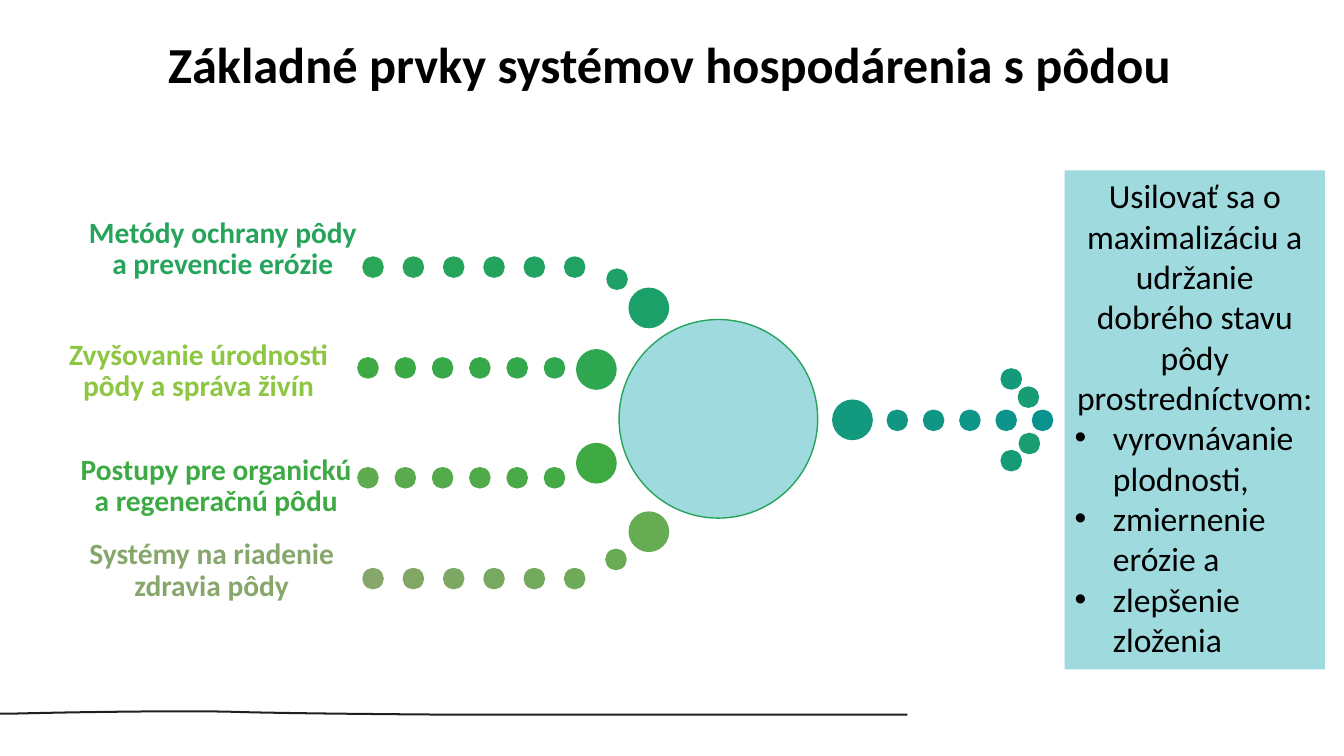
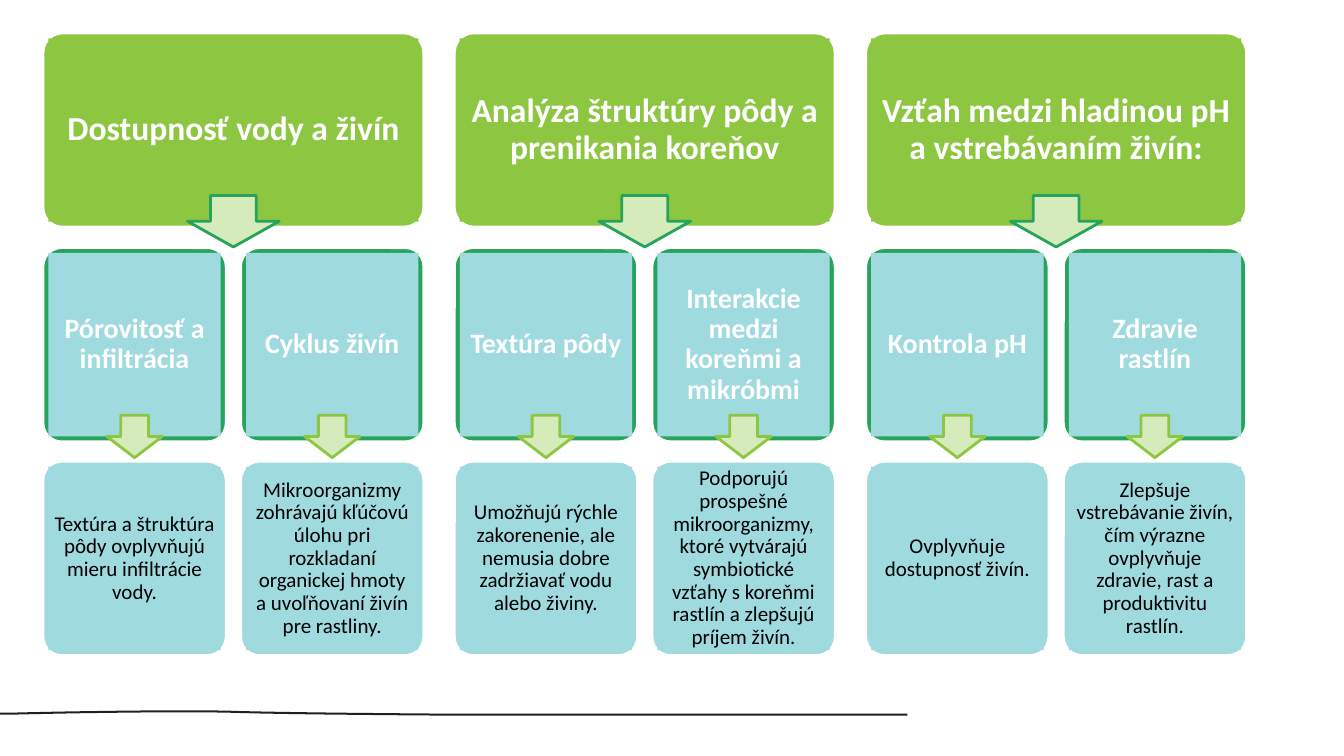
from lxml import etree
from pptx import Presentation
from pptx.dml.color import RGBColor
from pptx.enum.shapes import MSO_SHAPE
from pptx.enum.text import MSO_ANCHOR, PP_ALIGN
from pptx.oxml.ns import qn
from pptx.util import Inches, Pt

# Shared style
FONT = "Calibri"
BLACK = RGBColor(0x00, 0x00, 0x00)
WHITE = RGBColor(0xFF, 0xFF, 0xFF)
INK = RGBColor(0x23, 0x1F, 0x20)
AQUA = RGBColor(0x9F, 0xDA, 0xDF)
LIME = RGBColor(0x8D, 0xC6, 0x41)
PALE_LIME = RGBColor(0xD6, 0xEB, 0xBB)
GREEN = RGBColor(0x26, 0xA4, 0x5B)
LEAF = RGBColor(0x3D, 0xAA, 0x44)
OLIVE = RGBColor(0x86, 0xA6, 0x6B)

# Ends of the dot colour ramps
EMERALD = RGBColor(0x2A, 0xA6, 0x57)
SEA_GREEN = RGBColor(0x1C, 0xA0, 0x6A)
GRASS = RGBColor(0x2F, 0xA7, 0x51)
MOSS = RGBColor(0x5F, 0xAB, 0x4F)
MEADOW = RGBColor(0x3F, 0xAA, 0x44)
SAGE = RGBColor(0x65, 0xAC, 0x52)
TEAL = RGBColor(0x0A, 0x93, 0x8E)
JADE = RGBColor(0x19, 0x9D, 0x71)

DOT, HUB = 0.2, 0.39

# Label, label box, label colour, ramp ends, dot start, dot step, elbow, hub
INPUTS = [
    ("Metódy ochrany pôdy a prevencie erózie", (0.84, 2.3, 2.74, 0.49),
     GREEN, EMERALD, SEA_GREEN, (3.6, 2.55), 0.4, [(6.02, 2.67)], (6.24, 2.86)),
    ("Zvyšovanie úrodnosti pôdy a správa živín", (0.6, 3.51, 2.74, 0.49),
     LIME, LEAF, GRASS, (3.55, 3.55), 0.37, [], (5.72, 3.47)),
    ("Postupy pre organickú a regeneračnú pôdu", (0.73, 4.65, 2.83, 0.49),
     LEAF, MOSS, MEADOW, (3.55, 4.64), 0.37, [], (5.72, 4.4)),
    ("Systémy na riadenie zdravia pôdy", (0.73, 5.49, 2.74, 0.49),
     OLIVE, OLIVE, SAGE, (3.6, 5.64), 0.4, [(6.01, 5.45)], (6.24, 5.08)),
]
GOAL = ("Usilovať sa o maximalizáciu a udržanie dobrého stavu pôdy "
        "prostredníctvom:")
GOAL_POINTS = ["vyrovnávanie plodnosti,", "zmiernenie erózie a",
               "zlepšenie zloženia"]

# Column heading, then pairs of topic and effect
COLUMNS = [
    ("Dostupnosť vody a živín", [
        ("Pórovitosť a infiltrácia",
         "Textúra a štruktúra pôdy ovplyvňujú mieru infiltrácie vody."),
        ("Cyklus živín",
         "Mikroorganizmy zohrávajú kľúčovú úlohu pri rozkladaní organickej "
         "hmoty a uvoľňovaní živín pre rastliny."),
    ]),
    ("Analýza štruktúry pôdy a prenikania koreňov", [
        ("Textúra pôdy",
         "Umožňujú rýchle zakorenenie, ale nemusia dobre zadržiavať vodu "
         "alebo živiny."),
        ("Interakcie medzi koreňmi a mikróbmi",
         "Podporujú prospešné mikroorganizmy, ktoré vytvárajú symbiotické "
         "vzťahy s koreňmi rastlín a zlepšujú príjem živín."),
    ]),
    ("Vzťah medzi hladinou pH a vstrebávaním živín:", [
        ("Kontrola pH", "Ovplyvňuje dostupnosť živín."),
        ("Zdravie rastlín",
         "Zlepšuje vstrebávanie živín, čím výrazne ovplyvňuje zdravie, rast "
         "a produktivitu rastlín."),
    ]),
]


# Basic elements
def add_shape(s, kind, box, fill, line=None, width=1):
    sp = s.shapes.add_shape(kind, *map(Inches, box))
    sp.shadow.inherit = False
    sp.fill.solid()
    sp.fill.fore_color.rgb = fill
    if line is None:
        sp.line.fill.background()
    else:
        sp.line.color.rgb = line
        sp.line.width = Pt(width)
    return sp


def set_frame(sp, anchor, inset_x, inset_y):
    tf = sp.text_frame
    tf.word_wrap = True
    tf.vertical_anchor = anchor
    tf.margin_left = tf.margin_right = Inches(inset_x)
    tf.margin_top = tf.margin_bottom = Inches(inset_y)
    return tf


def write(p, text, size, color, bold=False, align=PP_ALIGN.CENTER, spacing=None):
    p.alignment = align
    if spacing:
        p.line_spacing = spacing
    r = p.add_run()
    r.text = text
    r.font.name = FONT
    r.font.size = Pt(size)
    r.font.bold = bold
    r.font.color.rgb = color


def add_bullet(p, indent):
    pPr = p._p.get_or_add_pPr()
    pPr.set("marL", str(Inches(indent)))
    pPr.set("indent", str(-Inches(indent)))
    etree.SubElement(pPr, qn("a:buFont")).set("typeface", "Arial")
    etree.SubElement(pPr, qn("a:buChar")).set("char", "•")


def add_label(s, text, box, color):
    sp = s.shapes.add_textbox(*map(Inches, box))
    tf = set_frame(sp, MSO_ANCHOR.BOTTOM, 0, 0)
    write(tf.paragraphs[0], text, 21, color, bold=True, spacing=0.9)


def add_title(s, text):
    sp = s.shapes.add_textbox(*map(Inches, (0.73, 0.28, 11.83, 0.71)))
    tf = set_frame(sp, MSO_ANCHOR.TOP, 0.1, 0.05)
    write(tf.paragraphs[0], text, 36, BLACK, bold=True)


# Footer wave
def curve(p0, p1, p2, p3, steps=12):
    points = []
    for i in range(1, steps + 1):
        t = i / steps
        weights = ((1 - t) ** 3, 3 * t * (1 - t) ** 2, 3 * t * t * (1 - t), t ** 3)
        points.append(tuple(sum(w * p[axis] for w, p in zip(weights, (p0, p1, p2, p3)))
                            for axis in (0, 1)))
    return points


def add_wave(s):
    thickness = 0.02
    top = [(0, 7.07), (0.14, 7.07)]
    top += curve(top[-1], (0.52, 7.06), (1.55, 7.04), (2.23, 7.05))
    top += curve(top[-1], (2.81, 7.07), (4.41, 7.08), (4.43, 7.08))
    top.append((9, 7.08))
    bottom = [(x, y + thickness) for x, y in reversed(top)]
    outline = [(Inches(x), Inches(y)) for x, y in top + bottom]
    builder = s.shapes.build_freeform(*outline[0], scale=1.0)
    builder.add_line_segments(outline[1:], close=True)
    sp = builder.convert_to_shape()
    sp.shadow.inherit = False
    sp.fill.solid()
    sp.fill.fore_color.rgb = INK
    sp.line.fill.background()


def new_slide(prs):
    s = prs.slides.add_slide(prs.slide_layouts[6])
    add_wave(s)
    return s


# Dotted paths
def blend(start, end, t):
    return RGBColor(*(round(a + (b - a) * t) for a, b in zip(start, end)))


def add_dots(s, dots, start, end):
    """Draw (x, y, diameter) dots along a colour ramp."""
    for i, (x, y, d) in enumerate(dots):
        color = blend(start, end, i / (len(dots) - 1))
        add_shape(s, MSO_SHAPE.OVAL, (x, y, d, d), color, color)


def add_input(s, text, box, color, start, end, origin, step, elbow, hub):
    x, y = origin
    dots = [(x + i * step, y, DOT) for i in range(6)]
    dots += [(*corner, DOT) for corner in elbow] + [(*hub, HUB)]
    add_dots(s, dots, start, end)
    add_label(s, text, box, color)


def add_output_arrow(s):
    shaft = [(10.24 - i * 0.36, 4.07, DOT) for i in range(5)]
    head = [(x, y, DOT) for x, y in
            ((9.93, 3.66), (9.93, 4.47), (10.1, 3.84), (10.11, 4.3))]
    add_dots(s, shaft + [(8.26, 3.97, HUB)] + head, TEAL, JADE)


def add_goal_panel(s):
    sp = add_shape(s, MSO_SHAPE.RECTANGLE, (10.56, 1.69, 2.58, 4.95), AQUA)
    tf = set_frame(sp, MSO_ANCHOR.TOP, 0.1, 0.05)
    write(tf.paragraphs[0], GOAL, 24, BLACK)
    for point in GOAL_POINTS:
        p = tf.add_paragraph()
        add_bullet(p, 0.38)
        write(p, point, 24, BLACK, align=PP_ALIGN.LEFT)


# Card hierarchy
def add_card(s, box, text, frame, face, size, color, bold=True, inset=0.07):
    x, y, w, h = box
    pad = 0.05
    outer = add_shape(s, MSO_SHAPE.ROUNDED_RECTANGLE, box, frame, WHITE, 1.5)
    outer.adjustments[0] = 0.1
    inner = add_shape(s, MSO_SHAPE.RECTANGLE,
                      (x + pad, y + pad, w - 2 * pad, h - 2 * pad), face)
    tf = set_frame(inner, MSO_ANCHOR.MIDDLE, inset, inset)
    write(tf.paragraphs[0], text, size, color, bold, spacing=0.9)


def add_down_arrow(s, center, top, w, h, line):
    add_shape(s, MSO_SHAPE.DOWN_ARROW, (center - w / 2, top, w, h),
              PALE_LIME, line, 2)


def add_column(s, x, heading, topics):
    wide, narrow, height, gap = 3.77, 1.81, 1.92, 0.15
    heading_y, topic_y, effect_y = 0.33, 2.46, 4.58
    add_card(s, (x, heading_y, wide, height), heading, LIME, LIME, 24, WHITE)
    for i, (topic, effect) in enumerate(topics):
        left = x + i * (narrow + gap)
        add_card(s, (left, topic_y, narrow, height), topic, GREEN, AQUA, 20, WHITE)
        add_card(s, (left, effect_y, narrow, height), effect, AQUA, AQUA, 15,
                 BLACK, bold=False, inset=0.06)
        add_down_arrow(s, left + narrow / 2, 4.12, 0.55, 0.42, LIME)
    add_down_arrow(s, x + wide / 2, 1.94, 0.91, 0.51, GREEN)


# Slides
def build_elements_slide(prs):
    s = new_slide(prs)
    add_output_arrow(s)
    add_shape(s, MSO_SHAPE.OVAL, (6.14, 3.17, 1.97, 1.97), AQUA, GREEN)
    for item in INPUTS:
        add_input(s, *item)
    add_goal_panel(s)
    add_title(s, "Základné prvky systémov hospodárenia s pôdou")


def build_hierarchy_slide(prs):
    s = new_slide(prs)
    for i, (heading, topics) in enumerate(COLUMNS):
        add_column(s, 0.43 + i * 4.08, heading, topics)


def main():
    prs = Presentation()
    prs.slide_width = Inches(13.33)
    prs.slide_height = Inches(7.5)
    build_elements_slide(prs)
    build_hierarchy_slide(prs)
    prs.save("out.pptx")


if __name__ == "__main__":
    main()
